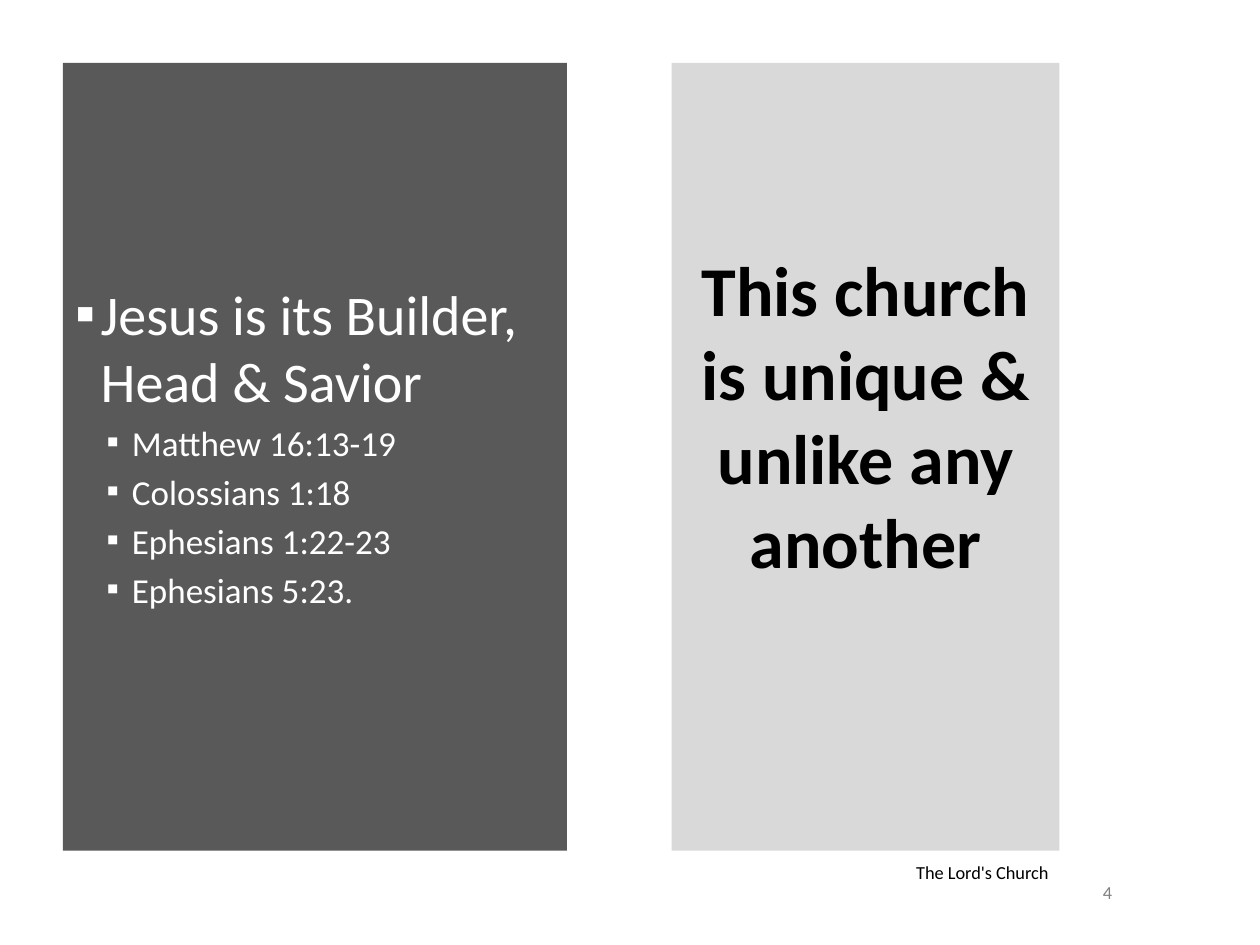
from dataclasses import dataclass

import pptx
import pptx.dml.color
import pptx.enum.shapes
import pptx.enum.text
import pptx.util
from lxml import etree
from pptx.oxml.ns import qn

Cm = pptx.util.Cm
Pt = pptx.util.Pt
ALIGN = pptx.enum.text.PP_ALIGN
ANCHOR = pptx.enum.text.MSO_ANCHOR


@dataclass(frozen=True)
class Theme:
    font: str = "Calibri"
    dark: str = "595959"
    light: str = "D9D9D9"
    white: str = "FFFFFF"
    black: str = "000000"
    grey: str = "808080"
    title: float = 40
    point: float = 32
    verse: float = 20
    footer: float = 10.5


THEME = Theme()
PANEL_TOP, PANEL_HEIGHT = Cm(1.27), Cm(15.88)
VERSES = ["Matthew 16:13-19", "Colossians 1:18", "Ephesians 1:22-23", "Ephesians 5:23."]


def rgb(value):
    return pptx.dml.color.RGBColor.from_string(value)


def add_panel(slide, left, width, color, bottom_inset):
    """Add a full-height panel; a deeper bottom inset lifts its centred text."""
    panel = slide.shapes.add_shape(
        pptx.enum.shapes.MSO_SHAPE.RECTANGLE, left, PANEL_TOP, width, PANEL_HEIGHT)
    panel.shadow.inherit = False
    panel.fill.solid()
    panel.fill.fore_color.rgb = rgb(color)
    panel.line.fill.background()
    frame = panel.text_frame
    frame.word_wrap = True
    frame.vertical_anchor = ANCHOR.MIDDLE
    frame.margin_bottom = bottom_inset
    return frame


def write(paragraph, text, size, color, align, bold=False):
    paragraph.alignment = align
    run = paragraph.add_run()
    run.text = text
    run.font.name = THEME.font
    run.font.size = Pt(size)
    run.font.bold = bold
    run.font.color.rgb = rgb(color)


def set_bullet(paragraph, indent):
    """Hang a small square bullet in front of text that starts at indent."""
    properties = paragraph._p.get_or_add_pPr()
    properties.set("marL", str(indent))
    properties.set("indent", str(-Cm(0.51)))
    color = etree.SubElement(properties, qn("a:buClr"))
    etree.SubElement(color, qn("a:srgbClr"), val=THEME.white)
    etree.SubElement(properties, qn("a:buFont"), typeface="Wingdings 2")
    properties[-1].set("typeface", THEME.font)
    etree.SubElement(properties, qn("a:buChar"), char="▪")


def add_points(frame):
    heading = frame.paragraphs[0]
    set_bullet(heading, Cm(0.51))
    write(heading, "Jesus is its Builder, Head & Savior", THEME.point, THEME.white, ALIGN.LEFT)
    for verse in VERSES:
        reference = frame.add_paragraph()
        reference.level = 1
        set_bullet(reference, Cm(1.14))
        reference.space_before = Pt(THEME.verse * 0.2)
        write(reference, verse, THEME.verse, THEME.white, ALIGN.LEFT)


def add_label(slide, box, text, color, align, anchor):
    frame = slide.shapes.add_textbox(*box).text_frame
    frame.word_wrap = True
    frame.vertical_anchor = anchor
    write(frame.paragraphs[0], text, THEME.footer, color, align)


def main():
    deck = pptx.Presentation()
    deck.slide_width, deck.slide_height = Cm(25.4), Cm(19.05)
    slide = deck.slides.add_slide(deck.slide_layouts[6])

    add_points(add_panel(slide, Cm(1.27), Cm(10.16), THEME.dark, Cm(0.61)))
    title = add_panel(slide, Cm(13.54), Cm(7.82), THEME.light, Cm(1.85))
    write(title.paragraphs[0], "This church is unique & unlike any another",
          THEME.title, THEME.black, ALIGN.CENTER, bold=True)

    add_label(slide, (Cm(21.59), Cm(17.78), Cm(1.47), Cm(0.43)), "4",
              THEME.grey, ALIGN.CENTER, ANCHOR.MIDDLE)
    add_label(slide, (Cm(13.54), Cm(17.5), Cm(7.85), Cm(0.43)), "The Lord's Church",
              THEME.black, ALIGN.RIGHT, ANCHOR.BOTTOM)
    deck.save("out.pptx")


if __name__ == "__main__":
    main()
